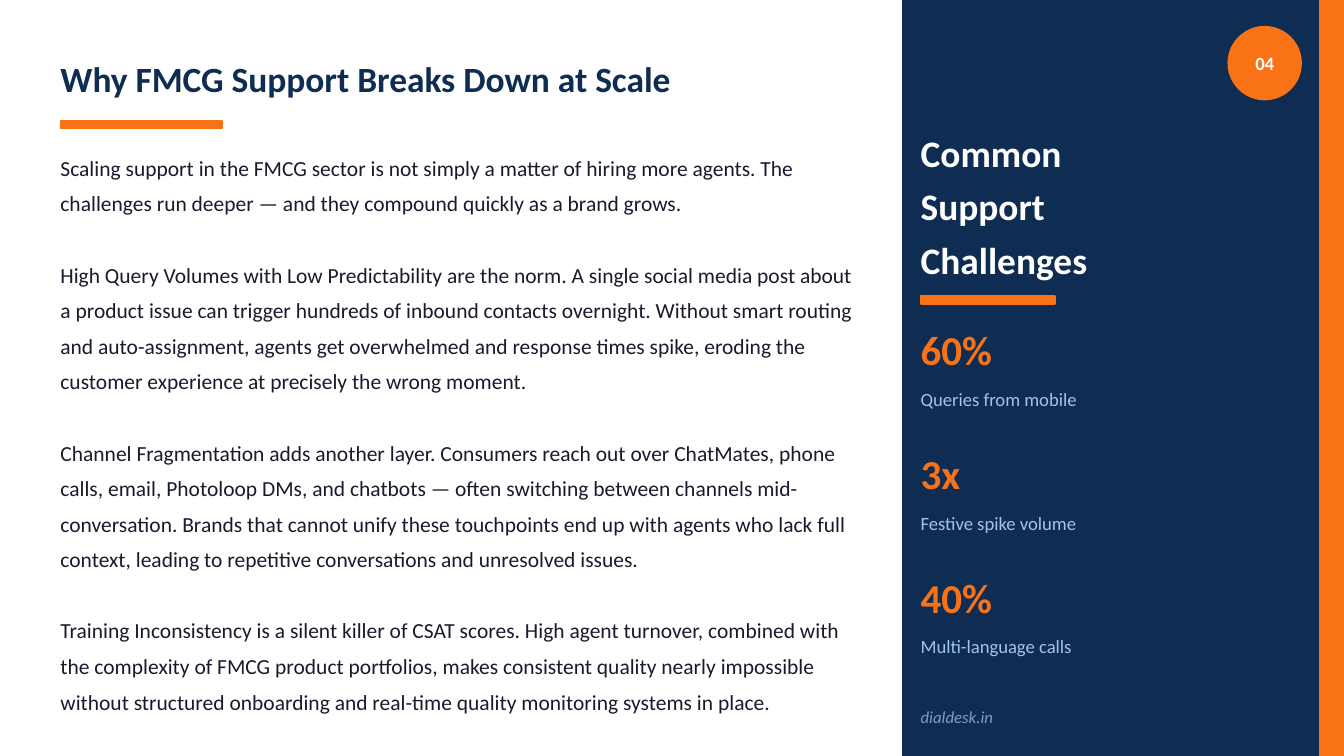
from dataclasses import dataclass

from pptx import Presentation
from pptx.dml.color import RGBColor
from pptx.enum.shapes import MSO_SHAPE as Preset
from pptx.enum.text import MSO_ANCHOR as Anchor, MSO_AUTO_SIZE as AutoSize, PP_ALIGN as Align
from pptx.util import Pt

NAVY = RGBColor(0x0F, 0x2D, 0x52)
ORANGE = RGBColor(0xF9, 0x73, 0x16)
WHITE = RGBColor(0xFF, 0xFF, 0xFF)
PALE_BLUE = RGBColor(0xA0, 0xC4, 0xE8)
MUTED_BLUE = RGBColor(0x7A, 0x9F, 0xC2)
INK = RGBColor(0x1A, 0x1A, 0x2E)
FONT = "Calibri"


@dataclass(frozen=True)
class Box:
    left: float
    top: float
    width: float
    height: float

    def lengths(self) -> tuple:
        return Pt(self.left), Pt(self.top), Pt(self.width), Pt(self.height)


@dataclass(frozen=True)
class Style:
    size: float
    color: RGBColor
    bold: bool = False
    italic: bool = False
    align: Align = Align.LEFT
    anchor: Anchor = Anchor.MIDDLE
    line_spacing: float = 1.0
    gap: float = 0


@dataclass(frozen=True)
class Stat:
    value: str
    label: str


SLIDE_WIDTH, SLIDE_HEIGHT = 720, 405
MAIN_LEFT, MAIN_WIDTH = 32.4, 432
PANEL_LEFT, PANEL_TEXT_LEFT, PANEL_TEXT_WIDTH = 483.84, 493.2, 205.2
STRIPE_LEFT = 707.04
STATS_TOP, STATS_STEP, VALUE_HEIGHT = 171.36, 66.24, 31.68
BADGE = Box(658.08, 14.4, 38.88, 38.88)

TITLE = Style(19, NAVY, bold=True)
BODY = Style(11.5, INK, anchor=Anchor.TOP, line_spacing=1.38, gap=19.1)
NUMBER = Style(10, WHITE, bold=True, align=Align.CENTER)
PANEL_HEADING = Style(20, WHITE, bold=True, line_spacing=1.2)
VALUE = Style(22, ORANGE, bold=True)
LABEL = Style(10, PALE_BLUE)
SITE = Style(9, MUTED_BLUE, italic=True)

STATS = [
    Stat("60%", "Queries from mobile"),
    Stat("3x", "Festive spike volume"),
    Stat("40%", "Multi-language calls"),
]

BODY_TEXT = [
    "Scaling support in the FMCG sector is not simply a matter of hiring more agents. "
    "The challenges run deeper — and they compound quickly as a brand grows.",
    "High Query Volumes with Low Predictability are the norm. A single social media post "
    "about a product issue can trigger hundreds of inbound contacts overnight. Without smart "
    "routing and auto-assignment, agents get overwhelmed and response times spike, eroding "
    "the customer experience at precisely the wrong moment.",
    "Channel Fragmentation adds another layer. Consumers reach out over ChatMates, phone "
    "calls, email, Photoloop DMs, and chatbots — often switching between channels "
    "mid-conversation. Brands that cannot unify these touchpoints end up with agents who "
    "lack full context, leading to repetitive conversations and unresolved issues.",
    "Training Inconsistency is a silent killer of CSAT scores. High agent turnover, combined "
    "with the complexity of FMCG product portfolios, makes consistent quality nearly "
    "impossible without structured onboarding and real-time quality monitoring systems in place.",
]


def fill_text(shape, lines: list[str], style: Style) -> None:
    frame = shape.text_frame
    frame.text = "\n".join(lines)
    frame.word_wrap = True
    frame.auto_size = AutoSize.NONE
    frame.vertical_anchor = style.anchor
    frame.margin_left = frame.margin_right = frame.margin_top = frame.margin_bottom = 0
    for index, paragraph in enumerate(frame.paragraphs):
        paragraph.alignment = style.align
        paragraph.line_spacing = style.line_spacing
        paragraph.space_before = Pt(style.gap if index else 0)
        for run in paragraph.runs:
            font = run.font
            font.name = FONT
            font.size = Pt(style.size)
            font.bold = style.bold
            font.italic = style.italic
            font.color.rgb = style.color


def add_text(slide, box: Box, lines: list[str], style: Style) -> None:
    fill_text(slide.shapes.add_textbox(*box.lengths()), lines, style)


def add_block(slide, box: Box, color: RGBColor, preset: Preset = Preset.RECTANGLE):
    shape = slide.shapes.add_shape(preset, *box.lengths())
    shape.shadow.inherit = False
    shape.fill.solid()
    shape.fill.fore_color.rgb = color
    shape.line.color.rgb = color
    shape.line.width = Pt(1)
    return shape


def add_stat(slide, stat: Stat, top: float) -> None:
    add_text(slide, Box(PANEL_TEXT_LEFT, top, 115.2, VALUE_HEIGHT), [stat.value], VALUE)
    label_box = Box(PANEL_TEXT_LEFT, top + VALUE_HEIGHT, PANEL_TEXT_WIDTH, 21.6)
    add_text(slide, label_box, [stat.label], LABEL)


def add_main_column(slide) -> None:
    title = slide.shapes.title
    title.left, title.top, title.width, title.height = Box(MAIN_LEFT, 23.04, MAIN_WIDTH, 37.44).lengths()
    fill_text(title, ["Why FMCG Support Breaks Down at Scale"], TITLE)
    add_block(slide, Box(MAIN_LEFT, 64.8, 86.4, 3.6), ORANGE)
    add_text(slide, Box(MAIN_LEFT, 77.76, MAIN_WIDTH, 309.6), BODY_TEXT, BODY)


def add_side_panel(slide) -> None:
    add_block(slide, Box(PANEL_LEFT, 0, SLIDE_WIDTH - PANEL_LEFT, SLIDE_HEIGHT), NAVY)
    add_block(slide, Box(STRIPE_LEFT, 0, SLIDE_WIDTH - STRIPE_LEFT, SLIDE_HEIGHT), ORANGE)
    add_block(slide, BADGE, ORANGE, Preset.OVAL)
    add_text(slide, BADGE, ["04"], NUMBER)
    heading_box = Box(PANEL_TEXT_LEFT, 64.8, PANEL_TEXT_WIDTH, 86.4)
    add_text(slide, heading_box, ["Common", "Support", "Challenges"], PANEL_HEADING)
    add_block(slide, Box(PANEL_TEXT_LEFT, 158.4, 72, 4.32), ORANGE)
    for index, stat in enumerate(STATS):
        add_stat(slide, stat, STATS_TOP + index * STATS_STEP)
    add_text(slide, Box(PANEL_TEXT_LEFT, 375.84, 201.6, 15.84), ["dialdesk.in"], SITE)


def main() -> None:
    presentation = Presentation()
    presentation.slide_width = Pt(SLIDE_WIDTH)
    presentation.slide_height = Pt(SLIDE_HEIGHT)
    slide = presentation.slides.add_slide(presentation.slide_layouts[5])
    add_side_panel(slide)
    add_main_column(slide)
    presentation.save("out.pptx")


if __name__ == "__main__":
    main()
